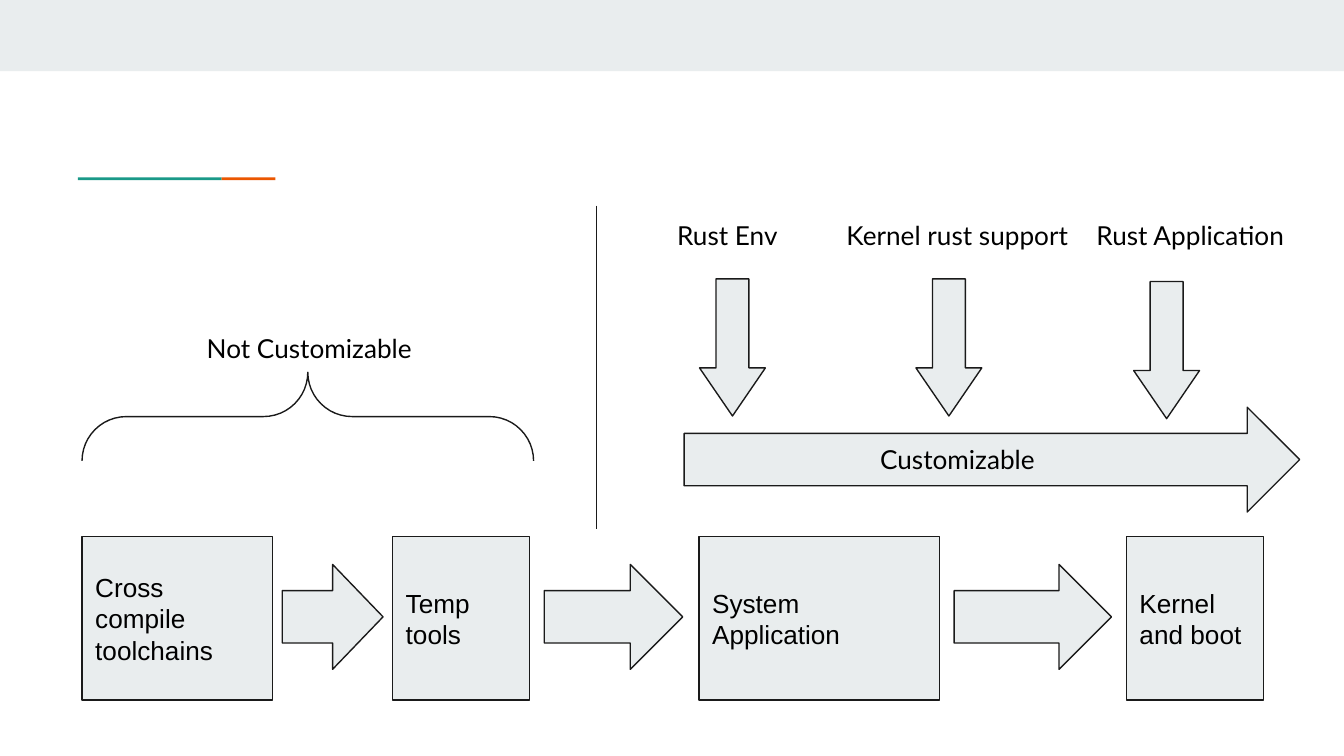
import pptx
import pptx.util
import pptx.dml.color
import pptx.enum.shapes
import pptx.enum.text
import pptx.oxml

Inches = pptx.util.Inches
Pt = pptx.util.Pt
RGBColor = pptx.dml.color.RGBColor
MSO_SHAPE = pptx.enum.shapes.MSO_SHAPE
MSO_ANCHOR = pptx.enum.text.MSO_ANCHOR
PP_ALIGN = pptx.enum.text.PP_ALIGN

PALE = RGBColor(0xE9, 0xED, 0xEE)
DARK = RGBColor(0x1A, 0x1A, 0x1A)
TEAL = RGBColor(0x1A, 0x99, 0x88)
ORANGE = RGBColor(0xEB, 0x56, 0x00)
BLACK = RGBColor(0, 0, 0)

prs = pptx.Presentation()
prs.slide_width = Inches(10)
prs.slide_height = Inches(10) * 9 // 16
slide = prs.slides.add_slide(prs.slide_layouts[6])


def add_shape(kind, left, top, width, height, fill=PALE, line=DARK):
    shape = slide.shapes.add_shape(
        kind, Inches(left), Inches(top), Inches(width), Inches(height))
    shape.shadow.inherit = False
    if fill is None:
        shape.fill.background()
    else:
        shape.fill.solid()
        shape.fill.fore_color.rgb = fill
    if line is None:
        shape.line.fill.background()
    else:
        shape.line.color.rgb = line
        shape.line.width = Pt(0.75)
    return shape


def write(shape, text, font):
    frame = shape.text_frame
    frame.word_wrap = True
    frame.margin_left = frame.margin_right = Inches(0.1)
    frame.margin_top = frame.margin_bottom = Inches(0.1)
    paragraph = frame.paragraphs[0]
    paragraph.alignment = PP_ALIGN.LEFT
    run = paragraph.add_run()
    run.text = text
    run.font.name = font
    run.font.size = Pt(14)
    run.font.color.rgb = BLACK


# Header band and accent rule
for left, top, width, height, color in [
    (0, 0, 10, 0.53, PALE),
    (0.58, 1.32, 1.07, 0.02, TEAL),
    (1.65, 1.32, 0.4, 0.02, ORANGE),
]:
    add_shape(MSO_SHAPE.RECTANGLE, left, top, width, height, color, None)

# Build stages and the arrows between them
for left, width, stage in [
    (0.61, 1.42, "Cross compile toolchains"),
    (2.92, 1.02, "Temp tools"),
    (5.2, 1.79, "System Application"),
    (8.38, 1.02, "Kernel and boot"),
]:
    box = add_shape(MSO_SHAPE.RECTANGLE, left, 3.99, width, 1.22)
    box.text_frame.vertical_anchor = MSO_ANCHOR.MIDDLE
    write(box, stage, "Arial")

for left, width in [(2.1, 0.75), (4.05, 1.03), (7.1, 1.17)]:
    add_shape(MSO_SHAPE.RIGHT_ARROW, left, 4.2, width, 0.78)

# Divider between the fixed and customizable halves
divider = slide.shapes.add_connector(
    pptx.enum.shapes.MSO_CONNECTOR.STRAIGHT,
    Inches(4.44), Inches(1.53), Inches(4.44), Inches(3.94))
divider.line.color.rgb = DARK
divider.line.width = Pt(0.75)
divider._element.spPr.append(pptx.oxml.parse_xml(
    '<a:effectLst xmlns:a="http://schemas.openxmlformats.org/drawingml/2006/main"/>'))

# Customizable span, its inputs, and the brace over the fixed stages
add_shape(MSO_SHAPE.RIGHT_ARROW, 5.09, 3.03, 4.58, 0.78)

for left, top in [(4.94, 2.34), (6.55, 2.34), (8.17, 2.36)]:
    input_arrow = add_shape(MSO_SHAPE.RIGHT_ARROW, left, top, 1.02, 0.49)
    input_arrow.rotation = 90
    input_arrow.adjustments[1] = 0.73

brace = add_shape(MSO_SHAPE.LEFT_BRACE, 1.96, 1.42, 0.66, 3.36, fill=None)
brace.rotation = 90
brace.adjustments[0] = 0.5

for left, top, width, label in [
    (6.45, 3.2, 2.14, "Customizable"),
    (1.44, 2.37, 2.06, "Not Customizable"),
    (4.94, 1.53, 0.96, "Rust Env"),
    (6.2, 1.53, 2.06, "Kernel rust support"),
    (8.06, 1.53, 1.68, "Rust Application"),
]:
    caption = slide.shapes.add_textbox(
        Inches(left), Inches(top), Inches(width), Inches(0.44))
    write(caption, label, "Lato")

prs.save("out.pptx")
